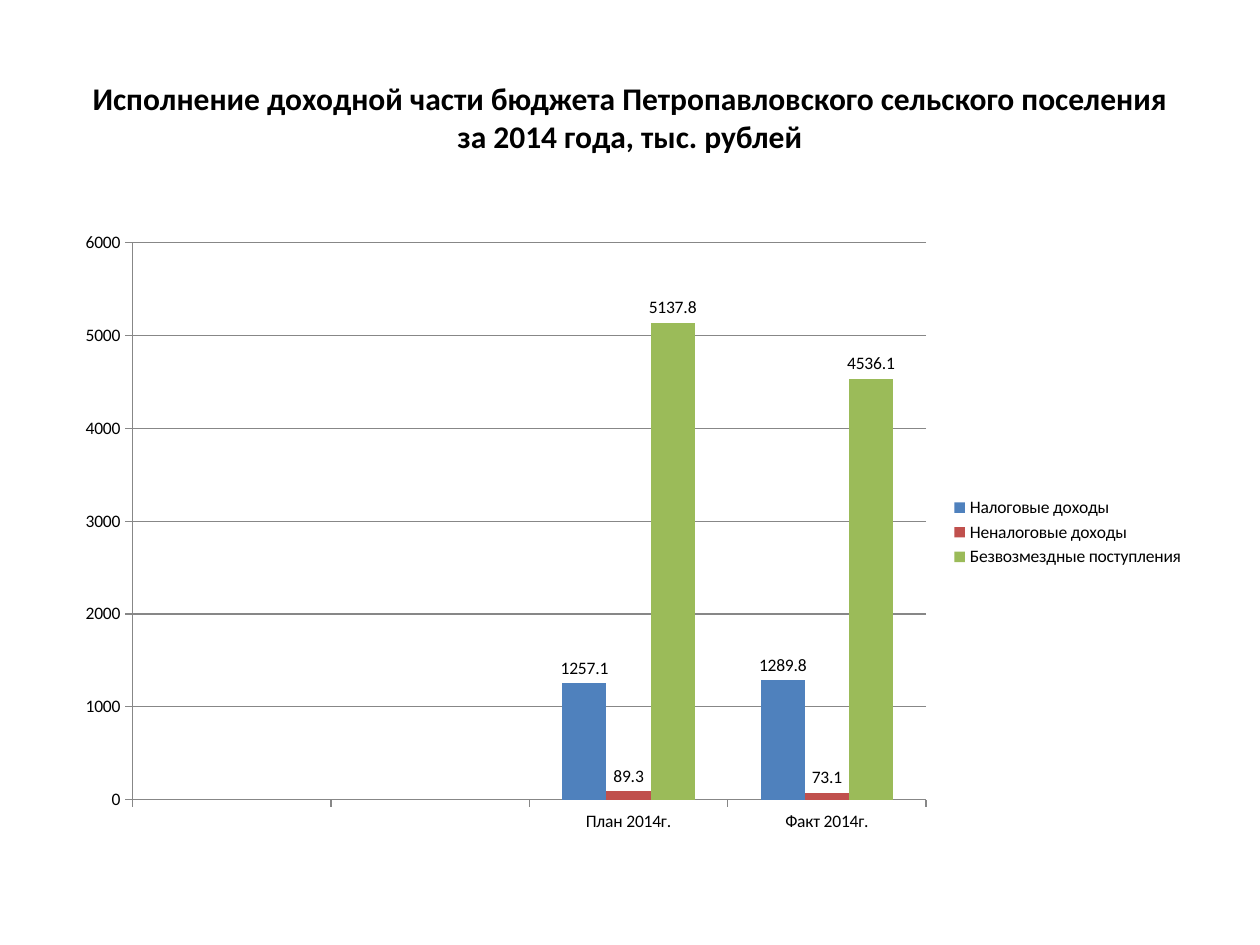
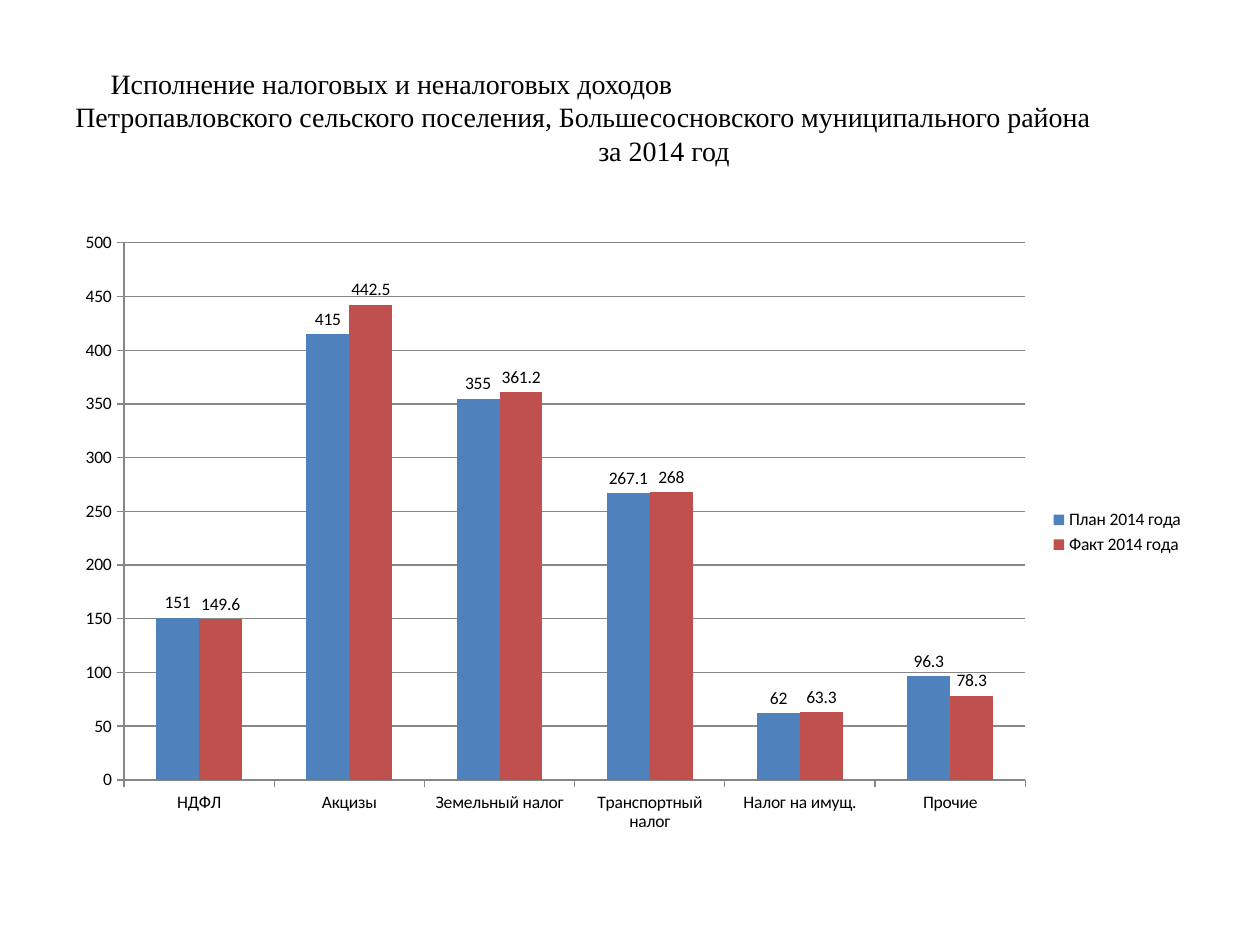
from pptx import Presentation
from pptx.chart.data import CategoryChartData
from pptx.dml.color import RGBColor
from pptx.enum.chart import XL_CHART_TYPE, XL_LABEL_POSITION, XL_LEGEND_POSITION, XL_TICK_MARK
from pptx.enum.text import MSO_ANCHOR, PP_ALIGN
from pptx.util import Inches, Pt

BLACK = RGBColor(0x00, 0x00, 0x00)
GRID = RGBColor(0x87, 0x87, 0x87)
SERIES_COLORS = [
    RGBColor(0x4F, 0x81, 0xBD),
    RGBColor(0xC0, 0x50, 0x4D),
    RGBColor(0x9B, 0xBB, 0x59),
]
BODY_FONT = "Calibri"
TITLE_BOX = (0.5, 0.3, 9, 1.25)
CHART_BOX = (0.5, 1.75, 9, 4.95)


def add_title(s, box, lines, font, size, bold=False):
    sp = s.shapes.add_textbox(*map(Inches, box))
    tf = sp.text_frame
    tf.word_wrap = True
    tf.vertical_anchor = MSO_ANCHOR.MIDDLE
    for i, (text, indent) in enumerate(lines):
        p = tf.paragraphs[0] if i == 0 else tf.add_paragraph()
        if indent is None:
            p.alignment = PP_ALIGN.CENTER
        else:
            p.alignment = PP_ALIGN.LEFT
            p._p.get_or_add_pPr().set("marL", str(Inches(indent)))
        r = p.add_run()
        r.text = text
        r.font.name = font
        r.font.size = Pt(size)
        r.font.bold = bold
        r.font.color.rgb = BLACK


def style_axis(axis):
    axis.major_tick_mark = XL_TICK_MARK.OUTSIDE
    axis.minor_tick_mark = XL_TICK_MARK.NONE
    axis.format.line.color.rgb = GRID
    axis.format.line.width = Pt(0.75)


def style_series(series, color):
    series.format.fill.solid()
    series.format.fill.fore_color.rgb = color
    series.invert_if_negative = False
    labels = series.data_labels
    labels.show_value = True
    labels.position = XL_LABEL_POSITION.OUTSIDE_END
    labels.font.name = BODY_FONT
    labels.font.size = Pt(10)
    labels.font.color.rgb = BLACK


def add_column_chart(s, box, categories, series_values, top, step):
    data = CategoryChartData()
    data.categories = categories
    for name, values in series_values.items():
        data.add_series(name, values)
    chart = s.shapes.add_chart(
        XL_CHART_TYPE.COLUMN_CLUSTERED, *map(Inches, box), data
    ).chart
    chart.has_title = False
    chart.font.name = BODY_FONT
    chart.font.size = Pt(10)
    chart.font.color.rgb = BLACK

    chart.has_legend = True
    chart.legend.position = XL_LEGEND_POSITION.RIGHT
    chart.legend.include_in_layout = False

    style_axis(chart.category_axis)
    axis = chart.value_axis
    style_axis(axis)
    axis.minimum_scale = 0
    axis.maximum_scale = top
    axis.major_unit = step
    axis.has_major_gridlines = True
    axis.major_gridlines.format.line.color.rgb = GRID
    axis.major_gridlines.format.line.width = Pt(0.75)

    plot = chart.plots[0]
    plot.gap_width = 150
    plot.overlap = 0
    plot.vary_by_categories = False
    for series, color in zip(plot.series, SERIES_COLORS):
        style_series(series, color)


def add_budget_slide(prs):
    s = prs.slides.add_slide(prs.slide_layouts[6])
    title = (
        "Исполнение доходной части бюджета Петропавловского сельского поселения "
        "за 2014 года, тыс. рублей"
    )
    add_title(s, TITLE_BOX, [(title, None)], BODY_FONT, 18, bold=True)
    add_column_chart(
        s,
        CHART_BOX,
        ["", "", "План 2014г.", "Факт 2014г."],
        {
            "Налоговые доходы": (None, None, 1257.1, 1289.8),
            "Неналоговые доходы": (None, None, 89.3, 73.1),
            "Безвозмездные поступления": (None, None, 5137.8, 4536.1),
        },
        top=6000,
        step=1000,
    )


def add_taxes_slide(prs):
    s = prs.slides.add_slide(prs.slide_layouts[6])
    lines = [
        ("Исполнение налоговых и неналоговых доходов", 0.28),
        ("Петропавловского сельского поселения, Большесосновского муниципального района", 0),
        ("за 2014 год", 4.15),
    ]
    add_title(s, TITLE_BOX, lines, "Times New Roman", 16)
    add_column_chart(
        s,
        CHART_BOX,
        ["НДФЛ", "Акцизы", "Земельный налог", "Транспортный налог", "Налог на имущ.", "Прочие"],
        {
            "План 2014 года": (151, 415, 355, 267.1, 62, 96.3),
            "Факт 2014 года": (149.6, 442.5, 361.2, 268, 63.3, 78.3),
        },
        top=500,
        step=50,
    )


def main():
    prs = Presentation()
    prs.slide_width = Inches(10)
    prs.slide_height = Inches(7.5)
    add_budget_slide(prs)
    add_taxes_slide(prs)
    prs.save("out.pptx")


if __name__ == "__main__":
    main()
